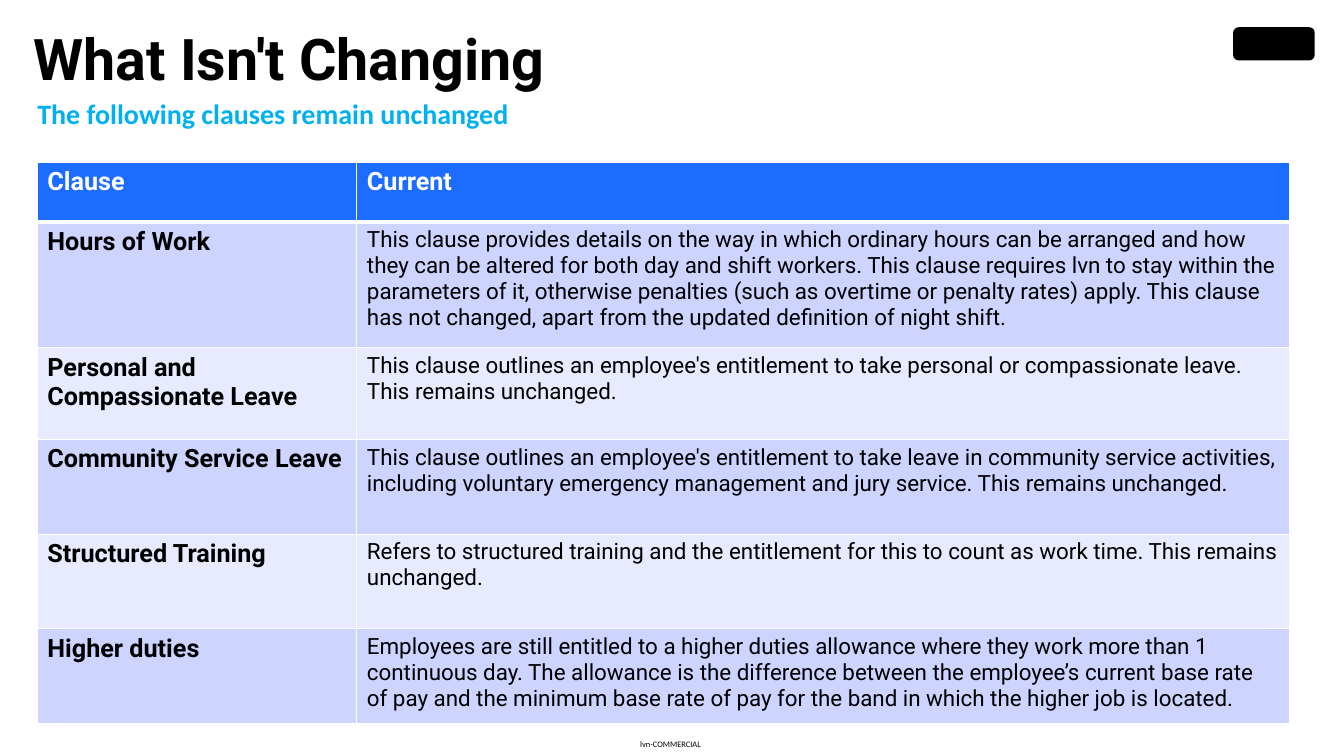
from lxml.etree import SubElement
from pptx import Presentation
from pptx.dml.color import RGBColor
from pptx.enum.shapes import MSO_SHAPE
from pptx.enum.text import MSO_ANCHOR, MSO_AUTO_SIZE, PP_ALIGN
from pptx.oxml.ns import qn
from pptx.util import Inches, Pt

BLACK = RGBColor(0x00, 0x00, 0x00)
WHITE = RGBColor(0xFF, 0xFF, 0xFF)
SKY = RGBColor(0x00, 0xB0, 0xF0)
HEADER_BLUE = RGBColor(0x1B, 0x6C, 0xFF)
DARK_BAND = RGBColor(0xCD, 0xD4, 0xFF)
LIGHT_BAND = RGBColor(0xE8, 0xEB, 0xFF)

COLUMN_WIDTHS = [3.17, 9.25]
ROW_HEIGHTS = [0.59, 1.25, 0.91, 0.94, 0.94, 0.94]
CLAUSES = [
    ("Clause", "Current"),
    ("Hours of Work",
     "This clause provides details on the way in which ordinary hours can be arranged and how "
     "they can be altered for both day and shift workers. This clause requires lvn to stay within "
     "the parameters of it, otherwise penalties (such as overtime or penalty rates) apply. This "
     "clause has not changed, apart from the updated definition of night shift."),
    ("Personal and Compassionate Leave",
     "This clause outlines an employee's entitlement to take personal or compassionate leave. "
     "This remains unchanged."),
    ("Community Service Leave",
     "This clause outlines an employee's entitlement to take leave in community service activities, "
     "including voluntary emergency management and jury service. This remains unchanged."),
    ("Structured Training",
     "Refers to structured training and the entitlement for this to count as work time. "
     "This remains unchanged."),
    ("Higher duties",
     "Employees are still entitled to a higher duties allowance where they work more than 1 "
     "continuous day. The allowance is the difference between the employee’s current base rate "
     "of pay and the minimum base rate of pay for the band in which the higher job is located."),
]


def write_text(text_frame, text, font_name, size, color, bold=False):
    text_frame.text = text
    font = text_frame.paragraphs[0].runs[0].font
    font.name = font_name
    font.size = Pt(size)
    font.color.rgb = color
    font.bold = bold


def clear_margins(text_frame):
    text_frame.margin_left = text_frame.margin_right = 0
    text_frame.margin_top = text_frame.margin_bottom = 0


def add_title(slide, left, top, width, height):
    title = slide.shapes.title
    title.left, title.top = Inches(left), Inches(top)
    title.width, title.height = Inches(width), Inches(height)
    text_frame = title.text_frame
    clear_margins(text_frame)
    text_frame.vertical_anchor = MSO_ANCHOR.TOP
    text_frame.auto_size = MSO_AUTO_SIZE.NONE
    write_text(text_frame, "What Isn't Changing", "Roboto", 41, BLACK, True)
    paragraph = text_frame.paragraphs[0]
    paragraph.alignment = PP_ALIGN.LEFT
    paragraph.line_spacing = 0.85


def add_label(slide, left, top, width, height, text, size, color, bold=False):
    label = slide.shapes.add_textbox(Inches(left), Inches(top), Inches(width), Inches(height))
    clear_margins(label.text_frame)
    label.text_frame.word_wrap = True
    write_text(label.text_frame, text, "Calibri", size, color, bold)


def add_brand_mark(slide, left, top, width, height):
    mark = slide.shapes.add_shape(
        MSO_SHAPE.ROUNDED_RECTANGLE, Inches(left), Inches(top), Inches(width), Inches(height))
    mark.shadow.inherit = False
    mark.fill.solid()
    mark.fill.fore_color.rgb = BLACK
    mark.line.fill.background()


def set_borders(cell, widths):
    properties = cell._tc.get_or_add_tcPr()
    for position, (side, points) in enumerate(widths.items()):
        line = properties.makeelement(qn(f"a:{side}"), {"w": str(Pt(points))})
        fill = SubElement(line, qn("a:solidFill"))
        SubElement(fill, qn("a:srgbClr"), {"val": str(WHITE)})
        properties.insert(position, line)


def add_clause_table(slide, left, top):
    frame = slide.shapes.add_table(
        len(ROW_HEIGHTS), len(COLUMN_WIDTHS), Inches(left), Inches(top),
        Inches(sum(COLUMN_WIDTHS)), Inches(sum(ROW_HEIGHTS)))
    table = frame.table
    for column, width in zip(table.columns, COLUMN_WIDTHS):
        column.width = Inches(width)
    for row_index, (row, texts) in enumerate(zip(table.rows, CLAUSES)):
        row.height = Inches(ROW_HEIGHTS[row_index])
        is_header = row_index == 0
        band = DARK_BAND if row_index % 2 else LIGHT_BAND
        for column_index, (cell, text) in enumerate(zip(row.cells, texts)):
            is_bold = is_header or column_index == 0
            write_text(cell.text_frame, text, "Roboto", 18 if is_bold else 16,
                       WHITE if is_header else BLACK, is_bold)
            cell.fill.solid()
            cell.fill.fore_color.rgb = HEADER_BLUE if is_header else band
            set_borders(cell, {"lnL": 1, "lnR": 1, "lnT": 3 if row_index == 1 else 1,
                               "lnB": 3 if is_header else 1})


def main():
    presentation = Presentation()
    presentation.slide_width = Inches(13.33)
    presentation.slide_height = Inches(7.5)
    slide = presentation.slides.add_slide(presentation.slide_layouts[5])
    add_label(slide, 6.35, 7.33, 0.8, 0.1, "lvn-COMMERCIAL", 6, BLACK)
    add_brand_mark(slide, 12.23, 0.27, 0.81, 0.33)
    add_title(slide, 0.33, 0.33, 11.53, 1.04)
    add_label(slide, 0.37, 0.96, 6.19, 0.34,
              "The following clauses remain unchanged", 20, SKY, True)
    add_clause_table(slide, 0.37, 1.61)
    presentation.save("out.pptx")


if __name__ == "__main__":
    main()
